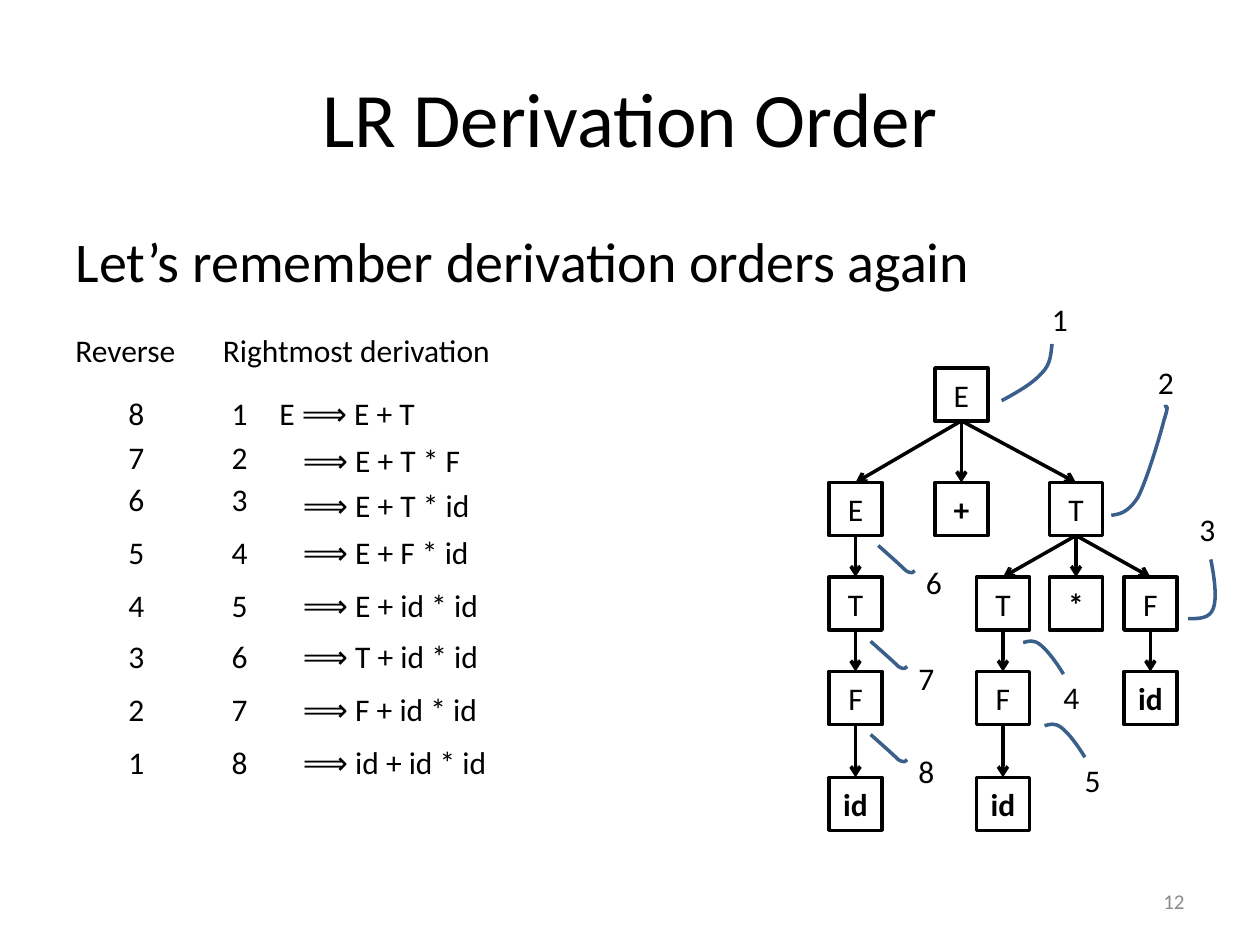
from dataclasses import dataclass

from lxml.etree import SubElement
from pptx import Presentation
from pptx.dml.color import RGBColor
from pptx.enum.shapes import MSO_CONNECTOR as CONN, MSO_SHAPE as SHAPE
from pptx.enum.text import MSO_ANCHOR as ANCHOR, MSO_AUTO_SIZE as AUTO, PP_ALIGN as ALIGN
from pptx.oxml.ns import qn
from pptx.util import Pt

PX = 9144


@dataclass(frozen=True)
class Theme:
    font: str = "Calibri"
    ink: str = "000000"
    paper: str = "FFFFFF"
    curve: str = "3A5F8B"
    muted: str = "8B8B8B"
    title: int = 44
    body: int = 32
    label: int = 18
    small: int = 12
    line: int = 2


THEME = Theme()
NODE = 42
LABEL_W, LABEL_H = 32, 40

ROWS = [
    (0, 0, -13, 136, "E ⟹ E + T"),
    (35, 37, 0, 153, " ⟹ E + T * F"),
    (68, 73, 0, 161, " ⟹ E + T * id"),
    (110, 110, 0, 160, " ⟹ E + F * id"),
    (152, 152, 0, 167, " ⟹ E + id * id"),
    (193, 193, 0, 167, " ⟹ T + id * id"),
    (235, 235, 0, 167, " ⟹ F + id * id"),
    (277, 277, 0, 174, " ⟹ id + id * id"),
]

LEVELS = [59, 150, 225, 300, 384]
TREE = ("E", 84, [
    ("E", 0, [("T", 0, [("F", 0, [("id", 0, [])])])]),
    ("+", 84, []),
    ("T", 175, [
        ("T", 117, [("F", 117, [("id", 117, [])])]),
        ("*", 175, []),
        ("F", 234, [("id", 234, [])]),
    ]),
])

HOOK_LEFT = [(-28, -9), (-19, -1), (-10, 7), (-6, 11), (-1, 14), (0, 12), (1, 11)]
HOOK_RIGHT = [(10, 2), (4, -8), (-3, -17), (-8, -21), (-14, -26), (-18, -24), (-22, -23)]
CALLOUTS = [
    ("1", 167, 0, [(10, 40), (9, 48), (9, 56), (2, 63), (-5, 71), (-17, 78), (-30, 85)]),
    ("2", 251, 50, [(15, 40), (17, 39), (19, 38), (15, 50), (12, 62), (1, 99),
                    (-6, 112), (-14, 124), (-20, 125), (-27, 126)]),
    ("3", 284, 167, [(19, 44), (22, 59), (24, 75), (21, 83), (18, 91), (10, 91), (1, 91)]),
    ("4", 176, 300, HOOK_RIGHT),
    ("5", 193, 366, HOOK_RIGHT),
    ("6", 67, 209, HOOK_LEFT),
    ("7", 61, 285, HOOK_LEFT),
    ("8", 61, 359, HOOK_LEFT),
]


def rgb(color):
    return RGBColor.from_string(color)


def place(sp, x, y, w, h):
    sp.left, sp.top, sp.width, sp.height = (v * PX for v in (x, y, w, h))


def write(tf, text, size, color=THEME.ink, align=ALIGN.LEFT, bold=False):
    tf.text = text
    p = tf.paragraphs[0]
    p.alignment = align
    for r in p.runs:
        r.font.name, r.font.size, r.font.bold = THEME.font, Pt(size), bold
        r.font.color.rgb = rgb(color)
    return p


def add_label(shapes, x, y, w, text):
    sp = shapes.add_textbox(x * PX, y * PX, w * PX, LABEL_H * PX)
    tf = sp.text_frame
    tf.word_wrap = False
    tf.auto_size = AUTO.SHAPE_TO_FIT_TEXT
    write(tf, text, THEME.label)


def style_line(sp, color):
    sp.line.color.rgb = rgb(color)
    sp.line.width = Pt(THEME.line)


def add_heading(slide, x, y, w, h):
    sp = slide.shapes.title
    place(sp, x, y, w, h)
    sp.text_frame.vertical_anchor = ANCHOR.MIDDLE
    write(sp.text_frame, "LR Derivation Order", THEME.title, align=ALIGN.CENTER)


def add_body(slide, x, y, w, h):
    sp = slide.placeholders[1]
    place(sp, x, y, w, h)
    p = write(sp.text_frame, "Let’s remember derivation orders again", THEME.body)
    pPr = p._p.get_or_add_pPr()
    pPr.set("marL", "0")
    pPr.set("indent", "0")
    SubElement(pPr, qn("a:buNone"))


def add_derivation(slide, x, y):
    shapes = slide.shapes
    add_label(shapes, x, y, 103, "Reverse")
    add_label(shapes, x + 117, y, 235, "Rightmost derivation")
    for i, (number_y, step_y, shift, w, text) in enumerate(ROWS):
        top = y + 50
        add_label(shapes, x + 42, top + number_y, LABEL_W, str(len(ROWS) - i))
        add_label(shapes, x + 124, top + number_y, LABEL_W, str(i + 1))
        add_label(shapes, x + 175 + shift, top + step_y, w, text)


def add_edge(shapes, parent, child):
    cn = shapes.add_connector(CONN.STRAIGHT, 0, 0, 0, 0)
    cn.begin_connect(parent, 2)
    cn.end_connect(child, 0)
    style_line(cn, THEME.ink)
    SubElement(cn.line._get_or_add_ln(), qn("a:tailEnd"), type="arrow")
    SubElement(cn._element.spPr, qn("a:effectLst"))


def add_tree(slide, x, y, node, level=0):
    text, dx, children = node
    sp = slide.shapes.add_shape(SHAPE.RECTANGLE, 0, 0, 0, 0)
    place(sp, x + dx, y + LEVELS[level], NODE, NODE)
    sp.shadow.inherit = False
    sp.fill.solid()
    sp.fill.fore_color.rgb = rgb(THEME.paper)
    style_line(sp, THEME.ink)
    sp.text_frame.vertical_anchor = ANCHOR.MIDDLE
    write(sp.text_frame, text, THEME.label, align=ALIGN.CENTER, bold=not text.isupper())
    for child in children:
        add_edge(slide.shapes, sp, add_tree(slide, x, y, child, level + 1))
    return sp


def bend(sp):
    segments = list(sp._element.iter(qn("a:lnTo")))
    outline = segments[0].getparent()
    for i in range(0, len(segments), 3):
        cubic = SubElement(outline, qn("a:cubicBezTo"))
        for segment in segments[i:i + 3]:
            cubic.append(segment[0])
            outline.remove(segment)


def add_callout(slide, x, y, text, points):
    shapes = slide.shapes.add_group_shape().shapes
    add_label(shapes, x, y, LABEL_W, text)
    curve = [((x + dx) * PX, (y + dy) * PX) for dx, dy in points]
    fb = shapes.build_freeform(*curve[0])
    fb.add_line_segments(curve[1:], close=False)
    sp = fb.convert_to_shape()
    bend(sp)
    sp.shadow.inherit = False
    sp.fill.background()
    style_line(sp, THEME.curve)


def add_parse_tree(slide, x, y):
    add_tree(slide, x, y, TREE)
    for text, dx, dy, points in CALLOUTS:
        add_callout(slide, x + dx, y + dy, text, points)


def add_page_number(slide, x, y, w, h):
    tf = slide.shapes.add_textbox(x * PX, y * PX, w * PX, h * PX).text_frame
    tf.word_wrap = True
    tf.vertical_anchor = ANCHOR.MIDDLE
    write(tf, "12", THEME.small, THEME.muted, ALIGN.RIGHT)


def main():
    prs = Presentation()
    prs.slide_width, prs.slide_height = 1000 * PX, 750 * PX
    slide = prs.slides.add_slide(prs.slide_layouts[1])
    add_heading(slide, 50, 30, 900, 125)
    add_body(slide, 50, 175, 900, 495)
    add_derivation(slide, 50, 258)
    add_parse_tree(slide, 658, 233)
    add_page_number(slide, 717, 695, 233, 40)
    prs.save("out.pptx")


if __name__ == "__main__":
    main()
